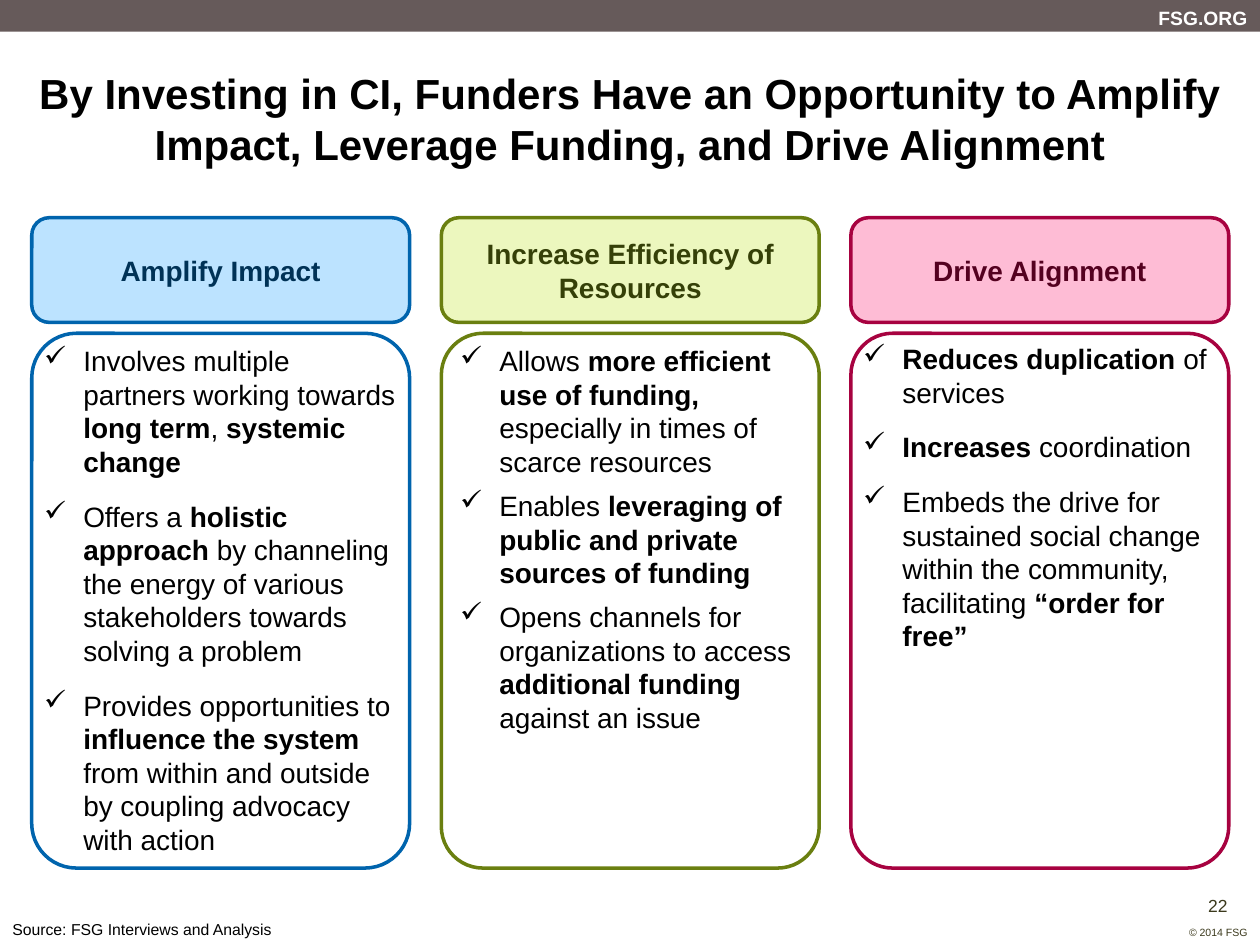
from lxml import etree
from pptx import Presentation
from pptx import util as u
from pptx.dml import color
from pptx.enum import shapes, text
from pptx.oxml import ns

FONT = "Arial"
INSET = 0.25
COLORS = {
    "bar": "665A5A", "white": "FFFFFF", "black": "000000", "footer": "3B391C",
    "blue_fill": "BCE3FF", "blue_line": "0064AD", "blue_text": "003256",
    "green_fill": "ECF7BE", "green_line": "6A7F10", "green_text": "354008",
    "red_fill": "FEBCD5", "red_line": "A70240", "red_text": "540120",
}

COLUMNS = [
    {
        "hue": "blue", "heading": "Amplify Impact", "round": 0.118, "after": 6,
        "text_box": (0, 0.08, 7.62, 10.69),
        "bullets": [
            [("Involves multiple partners working towards ", False), ("long term", True),
             (", ", False), ("systemic change", True)],
            [("Offers a ", False), ("holistic approach ", True),
             ("by channeling the energy of various stakeholders towards solving a problem", False)],
            [("Provides opportunities to ", False), ("influence the system ", True),
             ("from within and outside by coupling advocacy with action", False)],
        ],
    },
    {
        "hue": "green", "heading": "Increase Efficiency of Resources", "round": 0.11, "after": 0,
        "text_box": (0.13, 0.08, 7.34, 8.2),
        "bullets": [
            [("Allows ", False), ("more efficient use of funding, ", True),
             ("especially in times of scarce resources", False)],
            [("Enables ", False), ("leveraging of public and private sources of funding", True)],
            [("Opens channels for organizations to access ", False),
             ("additional funding ", True), ("against an issue", False)],
        ],
    },
    {
        "hue": "red", "heading": "Drive Alignment", "round": 0.11, "after": 6,
        "text_box": (0, 0.04, 7.62, 9.91),
        "bullets": [
            [("Reduces duplication ", True), ("of services", False)],
            [("Increases", True), (" coordination", False)],
            [("Embeds the drive for sustained social change within the community, facilitating ", False),
             ("“order for free”", True)],
        ],
    },
]


def rgb(name):
    return color.RGBColor.from_string(COLORS[name])


def add_run(paragraph, words, size, color_name, bold=False):
    run = paragraph.add_run()
    run.text = words
    run.font.name = FONT
    run.font.size = u.Pt(size)
    run.font.bold = bold
    run.font.color.rgb = rgb(color_name)


def add_panel(slide, kind, box, fill, line=None):
    shape = slide.shapes.add_shape(kind, *map(u.Cm, box))
    shape.shadow.inherit = False
    shape.fill.solid()
    shape.fill.fore_color.rgb = rgb(fill)
    if line:
        shape.line.color.rgb = rgb(line)
        shape.line.width = u.Pt(2)
    else:
        shape.line.fill.background()
    return shape


def add_text_box(slide, box, anchor=text.MSO_ANCHOR.TOP, wrap=True, insets=(INSET, 0.13)):
    frame = slide.shapes.add_textbox(*map(u.Cm, box)).text_frame
    frame.word_wrap = wrap
    frame.vertical_anchor = anchor
    frame.margin_left = frame.margin_right = u.Cm(insets[0])
    frame.margin_top = frame.margin_bottom = u.Cm(insets[1])
    return frame


def add_label(slide, box, words, size, color_name, align, bold=False, **frame_options):
    paragraph = add_text_box(slide, box, **frame_options).paragraphs[0]
    paragraph.alignment = align
    add_run(paragraph, words, size, color_name, bold)
    return paragraph


def set_check_bullet(paragraph):
    properties = paragraph._p.get_or_add_pPr()
    properties.set("marL", str(u.Cm(0.79)))
    properties.set("indent", str(-u.Cm(0.79)))
    bullet = etree.SubElement(properties, ns.qn("a:buChar"))
    bullet.set("char", "✓")


def add_top_bar(slide, left, top, width, height):
    add_panel(slide, shapes.MSO_SHAPE.RECTANGLE, (left, top, width, height), "bar")
    add_label(slide, (left + width - 2.31, top, 2.31, 0.74), "FSG.ORG", 11, "white",
              text.PP_ALIGN.RIGHT, True, anchor=text.MSO_ANCHOR.MIDDLE, wrap=False)


def add_title(slide, left, top, width, height):
    add_label(slide, (left, top, width, height),
              "By Investing in CI, Funders Have an Opportunity to Amplify Impact, "
              "Leverage Funding, and Drive Alignment", 24, "black", text.PP_ALIGN.CENTER,
              True, anchor=text.MSO_ANCHOR.MIDDLE, insets=(INSET, 0))


def add_column(slide, column, left, top, width, height):
    hue = column["hue"]
    heading_height, body_offset = 2.11, 2.33
    heading = add_panel(slide, shapes.MSO_SHAPE.ROUNDED_RECTANGLE,
                        (left, top, width, heading_height), f"{hue}_fill", f"{hue}_line")
    heading.text_frame.word_wrap = True
    heading.text_frame.vertical_anchor = text.MSO_ANCHOR.MIDDLE
    paragraph = heading.text_frame.paragraphs[0]
    paragraph.alignment = text.PP_ALIGN.CENTER
    add_run(paragraph, column["heading"], 16, f"{hue}_text", True)

    body_top = top + body_offset
    body = add_panel(slide, shapes.MSO_SHAPE.ROUNDED_RECTANGLE,
                     (left, body_top, width, height - body_offset), "white", f"{hue}_line")
    body.adjustments[0] = column["round"]

    dx, dy, text_width, text_height = column["text_box"]
    frame = add_text_box(slide, (left + dx, body_top + dy, text_width, text_height))
    for index, bullet in enumerate(column["bullets"]):
        paragraph = frame.paragraphs[0] if index == 0 else frame.add_paragraph()
        set_check_bullet(paragraph)
        paragraph.space_before = u.Pt(6 if index else 0)
        paragraph.space_after = u.Pt(column["after"])
        for words, bold in bullet:
            add_run(paragraph, words, 16, "black", bold)


def add_columns(slide, left, top, width, height, gap):
    column_width = (width - gap * (len(COLUMNS) - 1)) / len(COLUMNS)
    for index, column in enumerate(COLUMNS):
        add_column(slide, column, left + index * (column_width + gap), top, column_width, height)


def add_footer(slide, left, top, width, height):
    add_label(slide, (left + width - 1.32, top, 0.94, 0.53), "22", 10, "footer",
              text.PP_ALIGN.CENTER, anchor=text.MSO_ANCHOR.MIDDLE, wrap=False,
              insets=(INSET, 0.05))
    add_label(slide, (left + width - 1.7, top + height - 0.51, 1.7, 0.51), "© 2014 FSG", 6,
              "footer", text.PP_ALIGN.RIGHT, anchor=text.MSO_ANCHOR.MIDDLE, wrap=False)
    source = add_label(slide, (left, top + height - 0.64, width, 0.64),
                       "Source: FSG Interviews and Analysis", 9, "black", text.PP_ALIGN.LEFT)
    source.space_after = u.Pt(4)


def main():
    presentation = Presentation()
    presentation.slide_width = u.Cm(25.4)
    presentation.slide_height = u.Cm(19.05)
    slide = presentation.slides.add_slide(presentation.slide_layouts[6])
    add_top_bar(slide, 0, 0, 25.4, 0.64)
    add_title(slide, 0, 1.47, 25.4, 1.83)
    add_columns(slide, 0.64, 4.39, 24.13, 13.11, 0.64)
    add_footer(slide, 0, 17.98, 25.4, 1.07)
    presentation.save("out.pptx")


if __name__ == "__main__":
    main()
